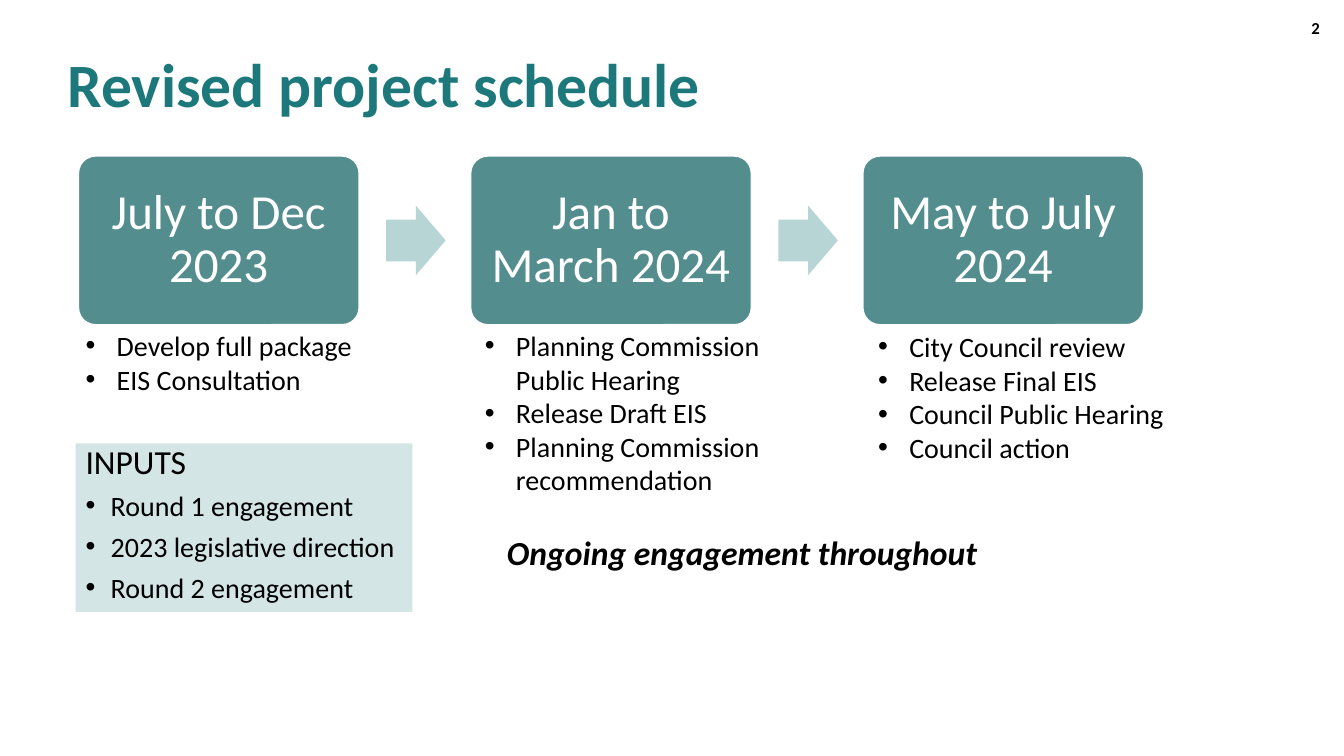
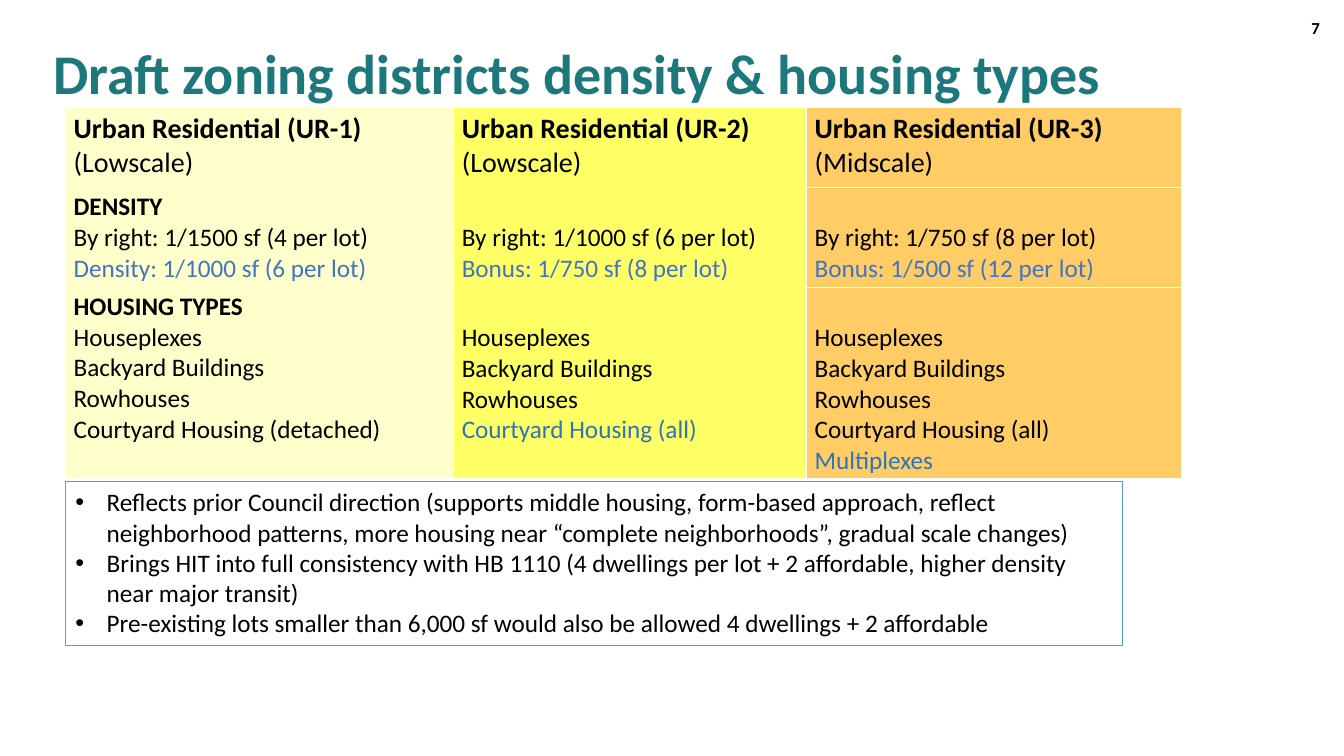
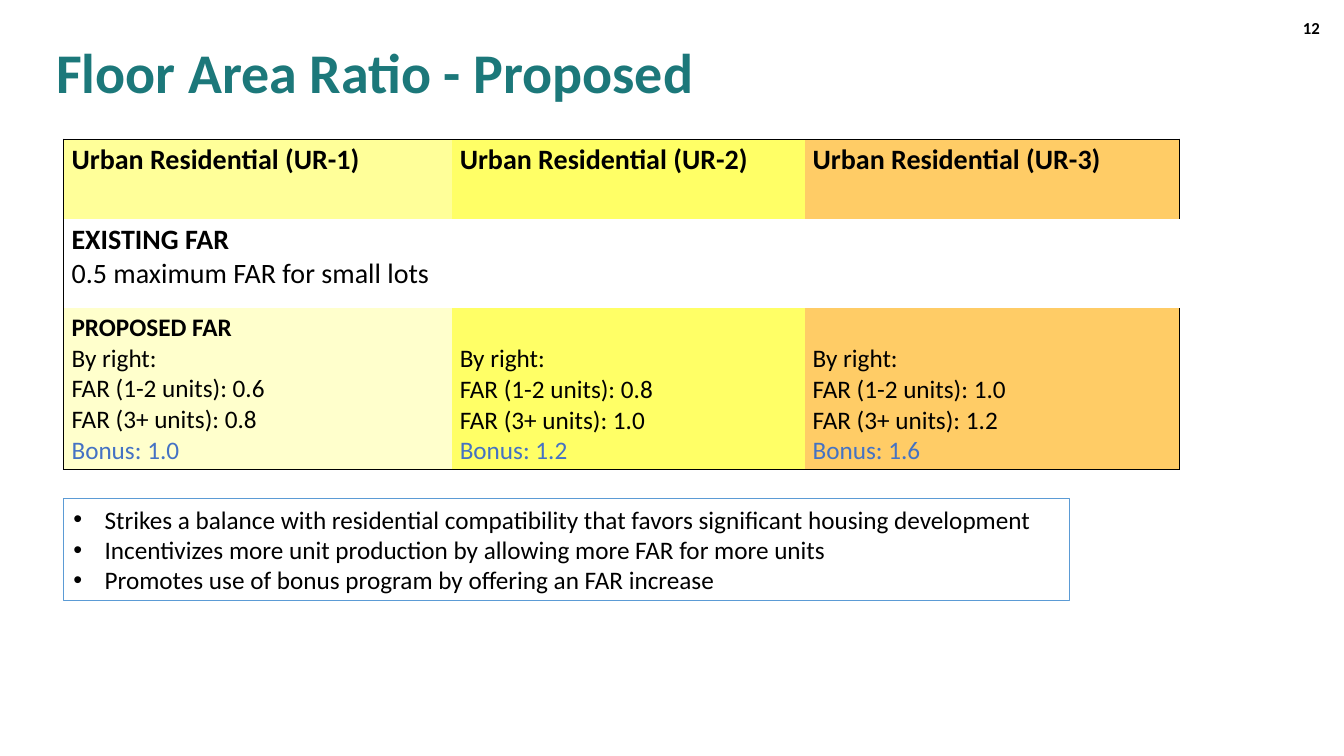
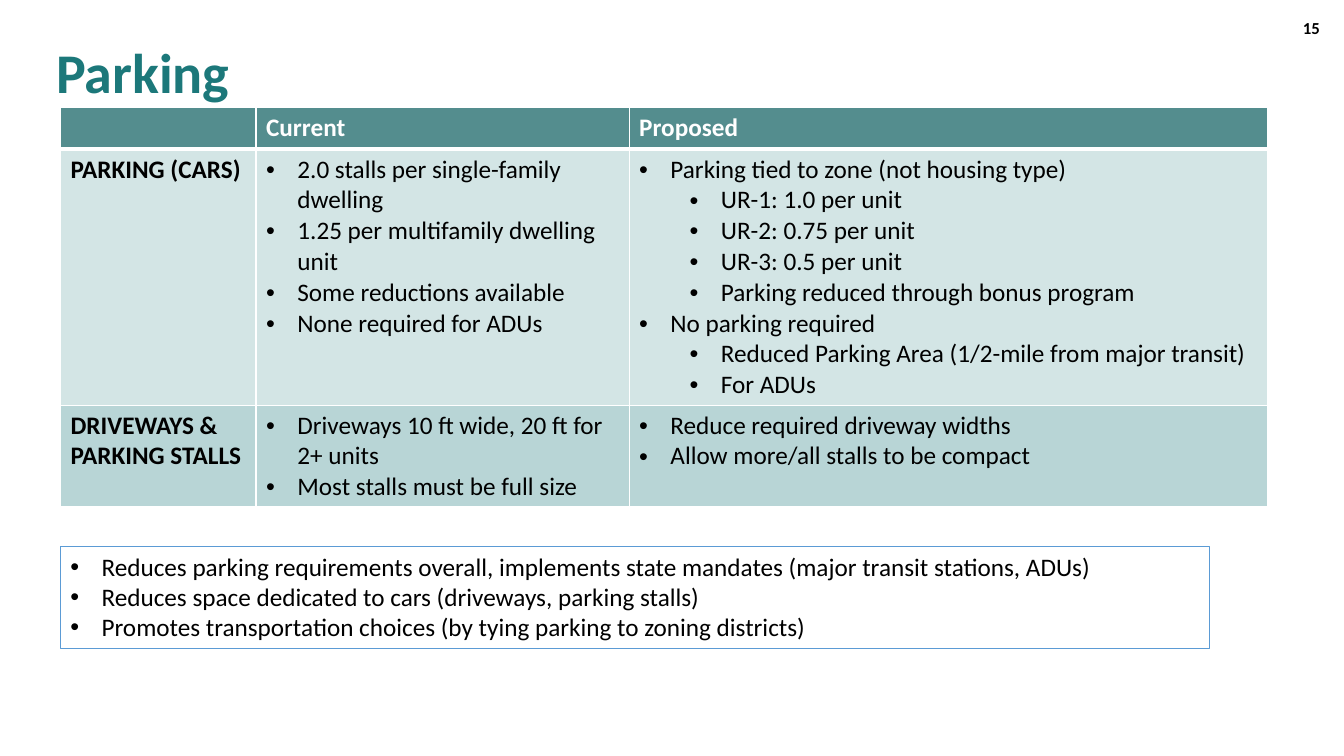
from dataclasses import dataclass, replace
from typing import Optional

from lxml.etree import SubElement
from pptx import Presentation
from pptx.dml.color import RGBColor
from pptx.enum.shapes import MSO_SHAPE as Shape
from pptx.enum.text import MSO_ANCHOR as Anchor, PP_ALIGN as Align
from pptx.oxml.ns import qn
from pptx.util import Inches, Pt

FONT = "Calibri"
COLORS = {
    "title": "1C787A", "text": "000000", "white": "FFFFFF",
    "teal": "548D8E", "teal_mid": "B8D5D6", "teal_light": "D3E5E5",
    "bonus": "4472C4", "added": "2E75B6", "note_line": "5B9BD5",
    "ur1": "FFFFCC", "ur1_header": "FFFF99", "ur2": "FFFF66", "ur3": "FFCC66",
}
ZONE_FILLS = ["ur1", "ur2", "ur3"]
ZONE_COLUMNS = [3.85, 3.5, 3.72]
ZONE_MARGINS = (0.08, 0.04)
HEADING_LINE = 0.31
SIDES = {"left": "a:lnL", "right": "a:lnR", "top": "a:lnT", "bottom": "a:lnB"}


@dataclass
class Line:
    text: str
    size: float = 18
    bold: bool = False
    italic: bool = False
    color: str = "text"
    hanging: float = 0
    level: int = 0
    align: Align = Align.LEFT
    spacing: Optional[float] = None
    before: float = 0


def rgb(name):
    return RGBColor.from_string(COLORS[name])


def plain(*texts, **style):
    return [Line(text, **style) for text in texts]


def bullets(*texts, hanging=0.31, **style):
    return plain(*texts, hanging=hanging, **style)


def add_bullet(paragraph, line):
    properties = paragraph._p.get_or_add_pPr()
    if line.level:
        properties.set("lvl", str(line.level))
    properties.set("marL", str(Inches(line.hanging + 0.5 * line.level)))
    properties.set("indent", str(-Inches(line.hanging)))
    SubElement(properties, qn("a:buFont"), typeface="Arial")
    SubElement(properties, qn("a:buChar"), char="•")


def write_lines(frame, lines):
    for index, line in enumerate(lines):
        paragraph = frame.paragraphs[0] if index == 0 else frame.add_paragraph()
        paragraph.alignment = line.align
        if line.spacing:
            paragraph.line_spacing = line.spacing
        if index and line.before:
            paragraph.space_before = Pt(line.before)
        if line.hanging:
            add_bullet(paragraph, line)
        paragraph.text = line.text
        font = paragraph.font
        font.name, font.size = FONT, Pt(line.size)
        font.bold, font.italic = line.bold, line.italic
        font.color.rgb = rgb(line.color)


def add_text(slide, box, lines, anchor=Anchor.TOP):
    frame = slide.shapes.add_textbox(*map(Inches, box)).text_frame
    frame.word_wrap = True
    frame.vertical_anchor = anchor
    write_lines(frame, lines)


def add_panel(slide, kind, box, fill=None, line=None, lines=(), anchor=Anchor.TOP,
              adjustments=()):
    shape = slide.shapes.add_shape(kind, *map(Inches, box))
    shape.shadow.inherit = False
    for index, value in enumerate(adjustments):
        shape.adjustments[index] = value
    if fill:
        shape.fill.solid()
        shape.fill.fore_color.rgb = rgb(fill)
    else:
        shape.fill.background()
    if line:
        shape.line.color.rgb = rgb(line)
        shape.line.width = Pt(0.75)
    else:
        shape.line.fill.background()
    shape.text_frame.vertical_anchor = anchor
    write_lines(shape.text_frame, lines)
    return shape


def add_note(slide, box, *texts):
    add_panel(slide, Shape.RECTANGLE, box, line="note_line", lines=bullets(*texts))


def set_borders(cell, borders):
    properties = cell._tc.get_or_add_tcPr()
    for side, tag in SIDES.items():
        color, width = borders.get(side, (None, 0))
        line = SubElement(properties, qn(tag), w=str(Pt(width)))
        if color:
            fill = SubElement(line, qn("a:solidFill"))
            SubElement(fill, qn("a:srgbClr"), val=COLORS[color])
        else:
            SubElement(line, qn("a:noFill"))


def grid_borders(row, column, row_count, column_count):
    return {side: ("white", 1) for side in SIDES}


def header_borders(row, column, row_count, column_count):
    borders = grid_borders(row, column, row_count, column_count)
    if row < 2:
        borders["top" if row else "bottom"] = ("white", 3)
    return borders


def outline_borders(row, column, row_count, column_count):
    edges = {"left": column == 0, "right": column == column_count - 1,
             "top": row == 0, "bottom": row == row_count - 1}
    return {side: ("text", 1) for side, on_edge in edges.items() if on_edge}


def add_table(slide, left, top, columns, heights, content, fills, borders, margins=(0.1, 0.05)):
    size = len(heights), len(columns)
    frame = slide.shapes.add_table(*size, Inches(left), Inches(top),
                                   Inches(sum(columns)), Inches(sum(heights)))
    table = frame.table
    for column, width in zip(table.columns, columns):
        column.width = Inches(width)
    for row, height in zip(table.rows, heights):
        row.height = Inches(height)
    for row, (row_lines, row_fills) in enumerate(zip(content, fills)):
        for column, (lines, fill) in enumerate(zip(row_lines, row_fills)):
            cell = table.cell(row, column)
            cell.margin_left = cell.margin_right = Inches(margins[0])
            cell.margin_top = cell.margin_bottom = Inches(margins[1])
            set_borders(cell, borders(row, column, *size))
            cell.fill.solid()
            cell.fill.fore_color.rgb = rgb(fill)
            write_lines(cell.text_frame, lines)
    return table


def align_below_heading(table, row):
    for column in range(1, len(table.columns)):
        table.cell(row, column).margin_top = Inches(ZONE_MARGINS[1] + HEADING_LINE)


def zone_header(number, scale=None):
    lines = plain(f"Urban Residential (UR-{number})", size=20, bold=True)
    return lines + (plain(scale, size=20) if scale else [])


def with_accent(lines, color):
    return lines[:-1] + [replace(lines[-1], color=color)]


def start_slide(presentation, title, number, left=0.46, top=0.02, size=40):
    slide = presentation.slides.add_slide(presentation.slide_layouts[6])
    add_text(slide, (left, top, 11.5, 1.45),
             plain(title, size=size, bold=True, color="title", spacing=0.9), Anchor.MIDDLE)
    add_text(slide, (10.19, 0.08, 3, 0.4),
             plain(str(number), size=12, bold=True, align=Align.RIGHT), Anchor.MIDDLE)
    return slide


def build_schedule(presentation):
    slide = start_slide(presentation, "Revised project schedule", 2, 0.57, 0.14, 44)
    pitch = 3.89
    for index, period in enumerate(["July to Dec 2023", "Jan to March 2024",
                                    "May to July 2024"]):
        left = 0.78 + index * pitch
        label = plain(period, size=35, color="white", align=Align.CENTER, spacing=0.9)
        add_panel(slide, Shape.ROUNDED_RECTANGLE, (left, 1.55, 2.78, 1.67), "teal", "white",
                  label, Anchor.MIDDLE, [0.1])
        if index:
            add_panel(slide, Shape.RIGHT_ARROW, (left - 0.84, 2.04, 0.59, 0.69), "teal_mid",
                      adjustments=[0.6, 0.5])

    steps = [
        ((0.75, 3.21, 3.53, 1.38), ["Develop full package", "EIS Consultation"]),
        ((4.71, 3.21, 3.03, 1.78), ["Planning Commission Public Hearing", "Release Draft EIS",
                                    "Planning Commission recommendation"]),
        ((8.61, 3.22, 3.15, 1.45), ["City Council review", "Release Final EIS",
                                    "Council Public Hearing", "Council action"]),
    ]
    for box, texts in steps:
        add_text(slide, box, bullets(*texts, size=20))

    add_text(slide, (4.93, 5.23, 4.92, 0.5),
             plain("Ongoing engagement throughout", size=24, bold=True, italic=True))
    inputs = plain("INPUTS", size=24, spacing=0.8)
    inputs += bullets("Round 1 engagement", "2023 legislative direction", "Round 2 engagement",
                      hanging=0.25, size=20, spacing=0.8, before=10)
    add_panel(slide, Shape.RECTANGLE, (0.75, 4.4, 3.34, 1.67), "teal_light", lines=inputs)


def build_density(presentation):
    slide = start_slide(presentation, "Draft zoning districts density & housing types", 7,
                        0.43, 0.03)
    density = [
        plain("By right: 1/1500 sf (4 per lot)", "Density: 1/1000 sf (6 per lot)"),
        plain("By right: 1/1000 sf (6 per lot)", "Bonus: 1/750 sf (8 per lot)"),
        plain("By right: 1/750 sf (8 per lot)", "Bonus: 1/500 sf (12 per lot)"),
    ]
    density = [with_accent(lines, "bonus") for lines in density]
    density[0] = plain("DENSITY", bold=True) + density[0]

    shared = plain("Houseplexes", "Backyard Buildings", "Rowhouses")
    housing = [
        plain("HOUSING TYPES", bold=True) + shared + plain("Courtyard Housing (detached)"),
        shared + plain("Courtyard Housing (all)", color="added"),
        shared + plain("Courtyard Housing (all)") + plain("Multiplexes", color="added"),
    ]
    headers = [zone_header(1, "(Lowscale)"), zone_header(2, "(Lowscale)"),
               zone_header(3, "(Midscale)")]
    table = add_table(slide, 0.65, 1.07, ZONE_COLUMNS, [0.79, 0.99, 1.9],
                      [headers, density, housing], [ZONE_FILLS] * 3, grid_borders,
                      ZONE_MARGINS)
    for row in (1, 2):
        align_below_heading(table, row)
    add_note(slide, (0.65, 4.78, 10.48, 1.62),
             "Reflects prior Council direction (supports middle housing, form-based approach, "
             "reflect neighborhood patterns, more housing near “complete neighborhoods”, "
             "gradual scale changes)",
             "Brings HIT into full consistency with HB 1110 (4 dwellings per lot + 2 affordable, "
             "higher density near major transit)",
             "Pre-existing lots smaller than 6,000 sf would also be allowed 4 dwellings + 2 "
             "affordable")


def build_floor_area(presentation):
    slide = start_slide(presentation, "Floor Area Ratio - Proposed", 12)
    proposed = [
        with_accent(plain("By right:", f"FAR (1-2 units): {small}", f"FAR (3+ units): {large}",
                          f"Bonus: {bonus}"), "bonus")
        for small, large, bonus in [("0.6", "0.8", "1.0"), ("0.8", "1.0", "1.2"),
                                    ("1.0", "1.2", "1.6")]
    ]
    proposed[0] = plain("PROPOSED FAR", bold=True) + proposed[0]
    existing = plain("EXISTING FAR", size=20, bold=True)
    existing += plain("0.5 maximum FAR for small lots", size=20)
    table = add_table(slide, 0.63, 1.38, ZONE_COLUMNS, [0.79, 0.89, 1.6],
                      [[zone_header(number) for number in (1, 2, 3)],
                       [existing, [], []], proposed],
                      [["ur1_header", "ur2", "ur3"], ["white"] * 3, ZONE_FILLS],
                      outline_borders, ZONE_MARGINS)
    table.cell(1, 0).merge(table.cell(1, 2))
    align_below_heading(table, 2)
    add_note(slide, (0.63, 4.95, 9.98, 1.01),
             "Strikes a balance with residential compatibility that favors significant housing "
             "development",
             "Incentivizes more unit production by allowing more FAR for more units",
             "Promotes use of bonus program by offering an FAR increase")


def build_parking(presentation):
    slide = start_slide(presentation, "Parking", 15)
    header = [[]] + [plain(text, bold=True, color="white") for text in ("Current", "Proposed")]
    current = bullets("2.0 stalls per single-family dwelling",
                      "1.25 per multifamily dwelling unit",
                      "Some reductions available", "None required for ADUs")
    proposed = (
        bullets("Parking tied to zone (not housing type)")
        + bullets("UR-1: 1.0 per unit", "UR-2: 0.75 per unit", "UR-3: 0.5 per unit",
                  "Parking reduced through bonus program", level=1)
        + bullets("No parking required")
        + bullets("Reduced Parking Area (1/2-mile from major transit)", "For ADUs", level=1)
    )
    driveways = [
        plain("DRIVEWAYS & PARKING STALLS", bold=True),
        bullets("Driveways 10 ft wide, 20 ft for 2+ units", "Most stalls must be full size"),
        bullets("Reduce required driveway widths", "Allow more/all stalls to be compact"),
    ]
    add_table(slide, 0.6, 1.07, [1.94, 3.7, 6.33], [0.41, 2.54, 1.01],
              [header, [plain("PARKING (CARS)", bold=True), current, proposed], driveways],
              [[fill] * 3 for fill in ("teal", "teal_light", "teal_mid")], header_borders)
    add_note(slide, (0.6, 5.42, 11.4, 1.01),
             "Reduces parking requirements overall, implements state mandates (major transit "
             "stations, ADUs)",
             "Reduces space dedicated to cars (driveways, parking stalls)",
             "Promotes transportation choices (by tying parking to zoning districts)")


def main():
    presentation = Presentation()
    presentation.slide_width = Inches(13.33)
    presentation.slide_height = Inches(7.5)
    build_schedule(presentation)
    build_density(presentation)
    build_floor_area(presentation)
    build_parking(presentation)
    presentation.save("out.pptx")


if __name__ == "__main__":
    main()
